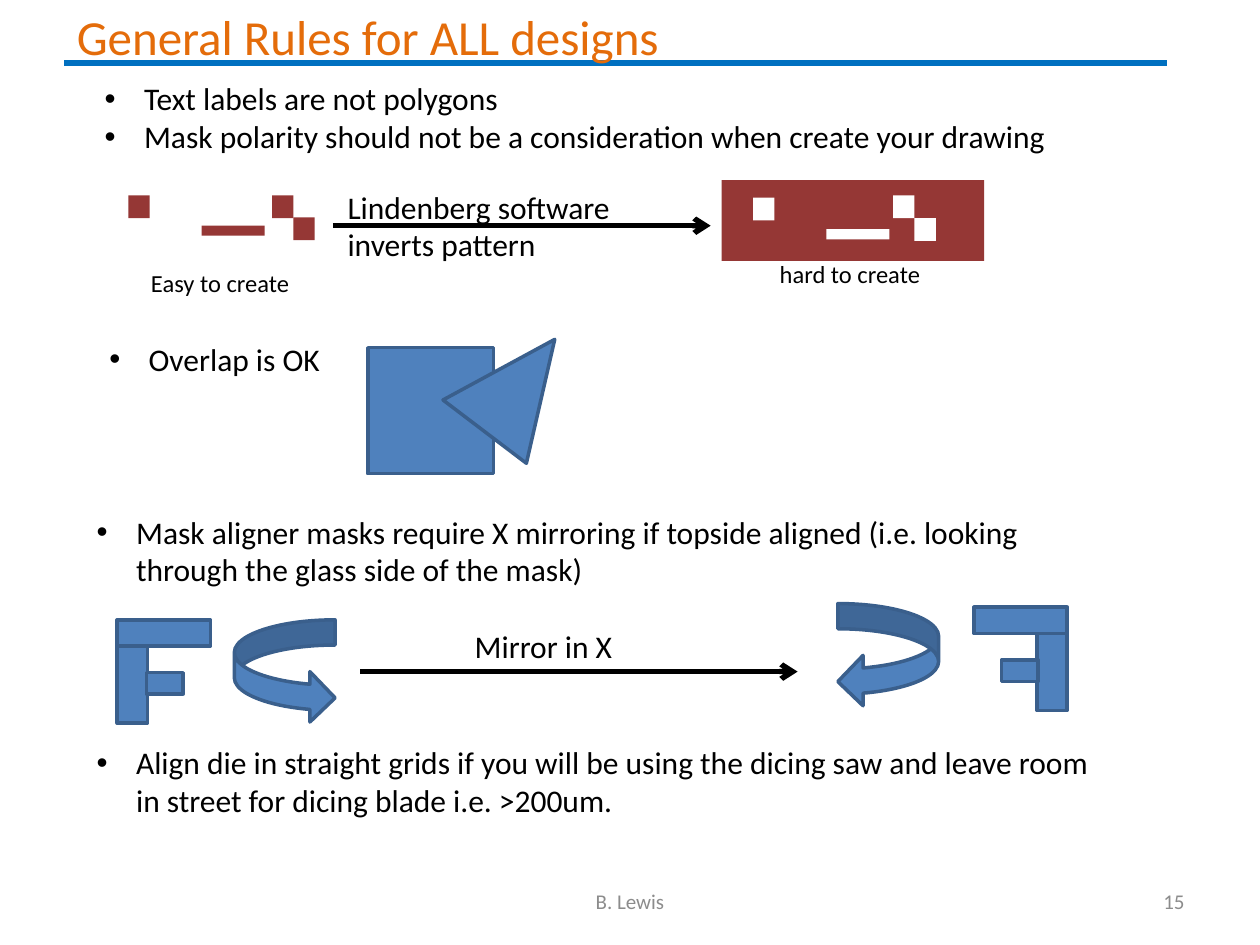
from dataclasses import dataclass

from lxml import etree
from pptx import Presentation
from pptx.dml.color import RGBColor
from pptx.enum.shapes import MSO_CONNECTOR, MSO_SHAPE
from pptx.enum.text import MSO_ANCHOR, MSO_AUTO_SIZE, PP_ALIGN
from pptx.oxml.ns import qn
from pptx.util import Pt

RECT = MSO_SHAPE.RECTANGLE
TRIANGLE = MSO_SHAPE.ISOSCELES_TRIANGLE
CURVED_RIGHT = MSO_SHAPE.CURVED_RIGHT_ARROW
CURVED_LEFT = MSO_SHAPE.CURVED_LEFT_ARROW
STRAIGHT = MSO_CONNECTOR.STRAIGHT
LEFT, CENTER, RIGHT = PP_ALIGN.LEFT, PP_ALIGN.CENTER, PP_ALIGN.RIGHT
TOP, MIDDLE = MSO_ANCHOR.TOP, MSO_ANCHOR.MIDDLE
NO_AUTOFIT = MSO_AUTO_SIZE.NONE

FONT = "Calibri"
INDENT = 22.5
COLORS = {
    "title": "E46C0A",
    "rule": "0070C0",
    "text": "000000",
    "footer": "8C8C8C",
    "mask": "953735",
    "clear": "FFFFFF",
    "fill": "4F81BD",
    "outline": "3A5F8C",
}


@dataclass
class Box:
    x: float
    y: float
    w: float
    h: float

    def lengths(self):
        return Pt(self.x), Pt(self.y), Pt(self.w), Pt(self.h)


def rgb(name: str) -> RGBColor:
    return RGBColor.from_string(COLORS[name])


def add_text(s, text: str, box: Box, *, sp=None, size=18, color="text",
             align=LEFT, anchor=TOP, wrap=True, bullet=False):
    """Write text, one paragraph a line, in a placeholder or a new text box."""
    if sp is None:
        sp = s.shapes.add_textbox(*box.lengths())
    sp.left, sp.top, sp.width, sp.height = box.lengths()
    tf = sp.text_frame
    tf.auto_size = NO_AUTOFIT
    tf.word_wrap = wrap
    tf.vertical_anchor = anchor
    tf.text = text
    for p in tf.paragraphs:
        p.alignment = align
        p.space_before = Pt(0)
        if bullet:
            pPr = p._p.get_or_add_pPr()
            pPr.set("marL", str(Pt(INDENT)))
            pPr.set("indent", str(-Pt(INDENT)))
            etree.SubElement(pPr, qn("a:buFont"), typeface="Arial")
            etree.SubElement(pPr, qn("a:buChar"), char="•")
        for r in p.runs:
            r.font.name = FONT
            r.font.size = Pt(size)
            r.font.color.rgb = rgb(color)
    return sp


def add_shape(s, box: Box, *, kind=RECT, fill="fill", line="outline", rotation=0.0):
    sp = s.shapes.add_shape(kind, *box.lengths())
    sp.shadow.inherit = False
    sp.rotation = rotation
    sp.fill.solid()
    sp.fill.fore_color.rgb = rgb(fill)
    if line:
        sp.line.color.rgb = rgb(line)
        sp.line.width = Pt(2)
    else:
        sp.line.fill.background()


def add_line(s, x1: float, x2: float, y: float, *, color="text", arrow=True):
    cx = s.shapes.add_connector(STRAIGHT, Pt(x1), Pt(y), Pt(x2), Pt(y))
    cx.line.color.rgb = rgb(color)
    cx.line.width = Pt(3)
    if arrow:
        etree.SubElement(cx.line._get_or_add_ln(), qn("a:tailEnd"), type="arrow")
    etree.SubElement(cx._element.spPr, qn("a:effectLst"))


def add_letter_f(s, x: float, y: float, mirrored=False):
    width = 53.3
    strokes = [Box(0, 0, width, 15.1), Box(0, 15.1, 17.3, 43.9),
               Box(16.7, 30.2, 20.9, 12.2)]
    for b in strokes:
        dx = width - b.x - b.w if mirrored else b.x
        add_shape(s, Box(x + dx, y + b.y, b.w, b.h))


def add_pattern(s, squares, bar, fill: str):
    for x, y in squares:
        add_shape(s, Box(x, y, 12.2, 13), fill=fill, line=None)
    add_shape(s, Box(*bar, 36, 5.8), fill=fill, line=None)


def main():
    prs = Presentation()
    prs.slide_width, prs.slide_height = Pt(720), Pt(540)
    s = prs.slides.add_slide(prs.slide_layouts[1])
    title, body = s.placeholders[0], s.placeholders[1]

    # Title over its rule
    add_line(s, 36.7, 666.7, 36, color="rule", arrow=False)
    add_text(s, "General Rules for ALL designs", Box(36.7, 0, 350.6, 41),
             sp=title, size=28, color="title", wrap=False)
    s.shapes.element.append(title.element)

    # Bulleted rules
    add_text(s, "Text labels are not polygons\n"
                "Mask polarity should not be a consideration when create your drawing",
             Box(52.6, 41.8, 576.7, 51), sp=body, bullet=True)
    add_text(s, "Overlap is OK", Box(55.4, 190.8, 136, 29), wrap=False, bullet=True)
    add_text(s, "Mask aligner masks require X mirroring if topside aligned "
                "(i.e. looking through the glass side of the mask)",
             Box(48.2, 289.4, 576.7, 51), bullet=True)
    add_text(s, "Align die in straight grids if you will be using the dicing saw "
                "and leave room in street for dicing blade i.e. >200um.",
             Box(48.2, 421.2, 585.4, 51), bullet=True)

    # Mask polarity: drawn pattern and its inverse
    add_pattern(s, [(73.4, 111.6), (155.5, 111.6), (167.6, 124.2)],
                (115.2, 128.9), "mask")
    add_shape(s, Box(412.4, 103, 150, 46.1), fill="mask", line=None)
    add_pattern(s, [(430.4, 113), (510.4, 111.6), (522.6, 124.6)],
                (472.3, 131), "clear")
    add_line(s, 190.2, 406.1, 129)
    add_text(s, "Lindenberg software inverts pattern", Box(191.5, 103.7, 207.4, 51))
    add_text(s, "Easy to create", Box(79.2, 149.8, 95.8, 24.5), size=14)
    add_text(s, "hard to create", Box(438.5, 144.7, 95.8, 24.5), size=14)

    # Overlapping shapes
    add_shape(s, Box(210.2, 198.7, 72, 72))
    add_shape(s, Box(267.1, 187.2, 59.8, 66.2), kind=TRIANGLE, rotation=37.2)

    # Mirroring in X
    add_letter_f(s, 67, 354.2)
    add_shape(s, Box(133.9, 354.2, 57.6, 59), kind=CURVED_RIGHT)
    add_text(s, "Mirror in X", Box(264.2, 355, 119.5, 29))
    add_line(s, 205.9, 455.8, 383.8)
    add_shape(s, Box(478.8, 344.9, 57.6, 59), kind=CURVED_LEFT)
    add_letter_f(s, 556.6, 347, mirrored=True)

    # Footer
    add_text(s, "B. Lewis", Box(246, 500.5, 228, 28.8), size=12,
             color="footer", align=CENTER, anchor=MIDDLE)
    add_text(s, "15", Box(516, 500.5, 168, 28.8), size=12,
             color="footer", align=RIGHT, anchor=MIDDLE)

    prs.save("out.pptx")


if __name__ == "__main__":
    main()
